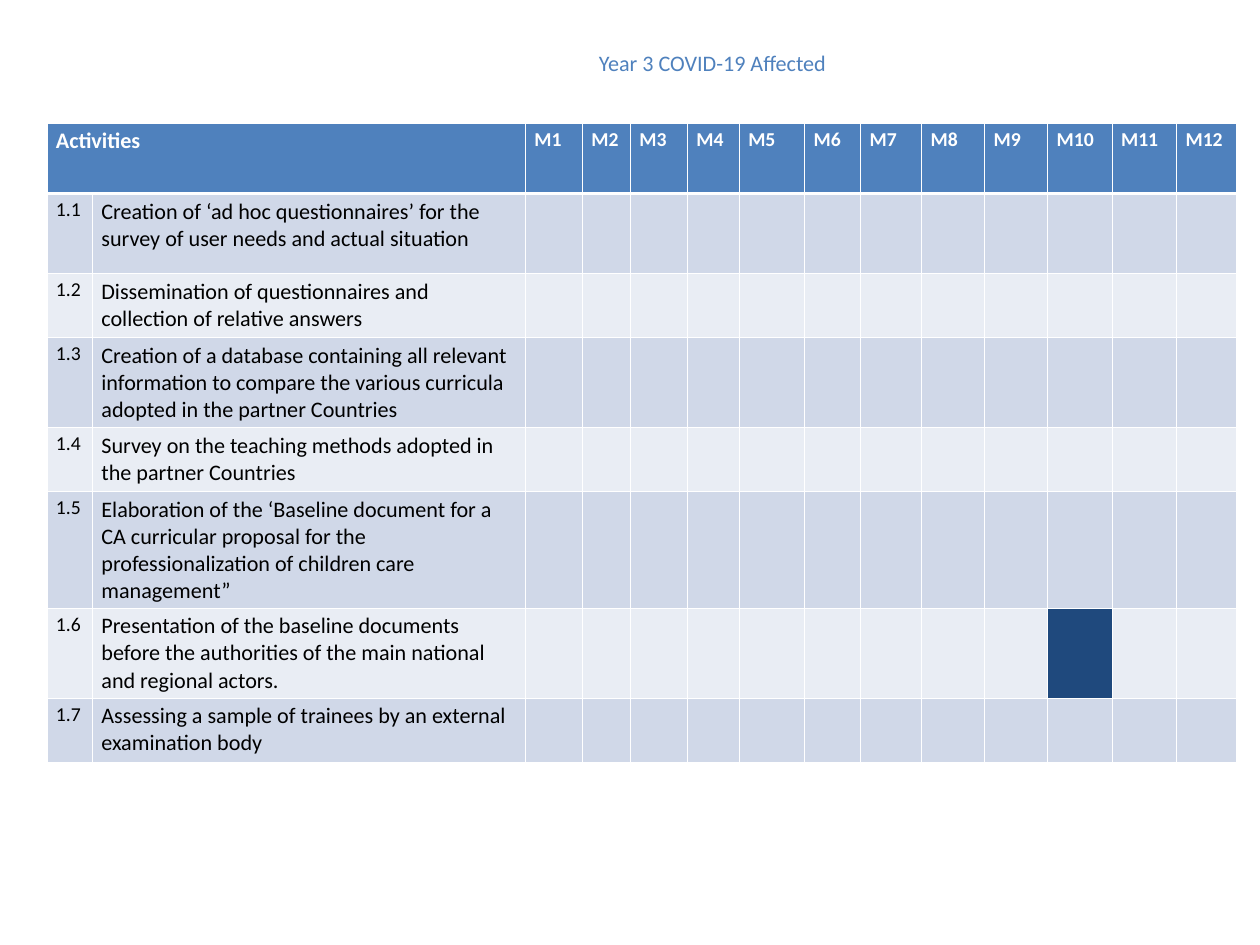
from pptx import Presentation
from pptx.dml.color import RGBColor
from pptx.enum.text import MSO_ANCHOR, MSO_AUTO_SIZE, PP_ALIGN
from pptx.oxml import parse_xml
from pptx.oxml.ns import nsdecls
from pptx.util import Pt

BLUE = RGBColor(0x4F, 0x81, 0xBD)
DARK_BLUE = RGBColor(0x1F, 0x49, 0x7D)
BAND_DARK = RGBColor(0xD0, 0xD8, 0xE8)
BAND_LIGHT = RGBColor(0xE9, 0xED, 0xF4)
WHITE = RGBColor(0xFF, 0xFF, 0xFF)
BLACK = RGBColor(0, 0, 0)

TITLE_BOX = (479.5, 36.7, 525.6, 28.8)
PLAN_BOX = (38.2, 100, 967, 517)

NUMBER_WIDTH, ACTIVITY_WIDTH = 37, 352
MONTH_WIDTHS = [46.3, 39, 46.3, 42.2, 53.2, 45.5, 49.6, 51.2, 51.2, 52.4, 52.4, 48.3]
HEADER_HEIGHT = 57.5

# Activity and row height
ACTIVITIES = [
    ("Creation of ‘ad hoc questionnaires’ for the survey of user needs and actual situation", 65),
    ("Dissemination of questionnaires and collection of relative answers", 52),
    ("Creation of a database containing all relevant information to compare "
     "the various curricula adopted in the partner Countries", 73),
    ("Survey on the teaching methods adopted in the partner Countries", 52),
    ("Elaboration of the ‘Baseline document for a CA curricular proposal "
     "for the professionalization of children care management”", 95),
    ("Presentation of the baseline documents before the authorities "
     "of the main national and regional actors.", 73),
    ("Assessing a sample of trainees by an external examination body", 52),
]
SCHEDULED = {(6, 10)}  # activity number, month

HEADER_FONT = {"name": "Calibri", "bold": True}
BODY_FONT = {"name": "Calibri", "bold": False}


def write(tf, text, color, **font):
    p = tf.paragraphs[0]
    r = p.add_run()
    r.text = text
    for key, value in font.items():
        setattr(r.font, key, value)
    r.font.color.rgb = color


def style_cell(cell, fill, top=1, bottom=1):
    tcPr = cell._tc.get_or_add_tcPr()
    for side, width in {"L": 1, "R": 1, "T": top, "B": bottom}.items():
        tcPr.append(parse_xml(
            f'<a:ln{side} {nsdecls("a")} w="{Pt(width)}"><a:solidFill>'
            f'<a:srgbClr val="{WHITE}"/></a:solidFill></a:ln{side}>'))
    cell.fill.solid()
    cell.fill.fore_color.rgb = fill


def add_title(slide, box):
    sp = slide.shapes.title
    for key, value in zip(("left", "top", "width", "height"), box):
        setattr(sp, key, Pt(value))
    tf = sp.text_frame
    settings = {"word_wrap": True, "auto_size": MSO_AUTO_SIZE.SHAPE_TO_FIT_TEXT,
                "vertical_anchor": MSO_ANCHOR.TOP}
    for key, value in settings.items():
        setattr(tf, key, value)
    tf.paragraphs[0].alignment = PP_ALIGN.LEFT
    write(tf, "Year 3 COVID-19 Affected", BLUE, name="Calibri", size=Pt(18))


def add_plan(slide, box):
    widths = [NUMBER_WIDTH, ACTIVITY_WIDTH] + MONTH_WIDTHS
    heights = [HEADER_HEIGHT] + [height for _, height in ACTIVITIES]
    table = slide.shapes.add_table(len(heights), len(widths), *map(Pt, box)).table
    for column, width in zip(table.columns, widths):
        column.width = Pt(width)
    for row, height in zip(table.rows, heights):
        row.height = Pt(height)

    # Header row
    for col in range(len(widths)):
        cell = table.cell(0, col)
        style_cell(cell, BLUE, bottom=3)
        if col > 1:
            write(cell.text_frame, f"M{col - 1}", WHITE, size=Pt(16), **HEADER_FONT)
    heading = table.cell(0, 0)
    heading.merge(table.cell(0, 1))
    write(heading.text_frame, "Activities", WHITE, size=Pt(18), **HEADER_FONT)

    # Activity rows
    for number, (activity, _) in enumerate(ACTIVITIES, 1):
        band = BAND_DARK if number % 2 else BAND_LIGHT
        for col in range(len(widths)):
            fill = DARK_BLUE if (number, col - 1) in SCHEDULED else band
            style_cell(table.cell(number, col), fill, top=3 if number == 1 else 1)
        write(table.cell(number, 0).text_frame, f"1.{number}", BLACK, size=Pt(16), **BODY_FONT)
        write(table.cell(number, 1).text_frame, activity, BLACK, size=Pt(18), **BODY_FONT)


def main():
    prs = Presentation()
    prs.slide_width, prs.slide_height = Pt(1024), Pt(768)
    slide = prs.slides.add_slide(prs.slide_layouts[5])
    add_plan(slide, PLAN_BOX)
    add_title(slide, TITLE_BOX)
    prs.save("out.pptx")


if __name__ == "__main__":
    main()
